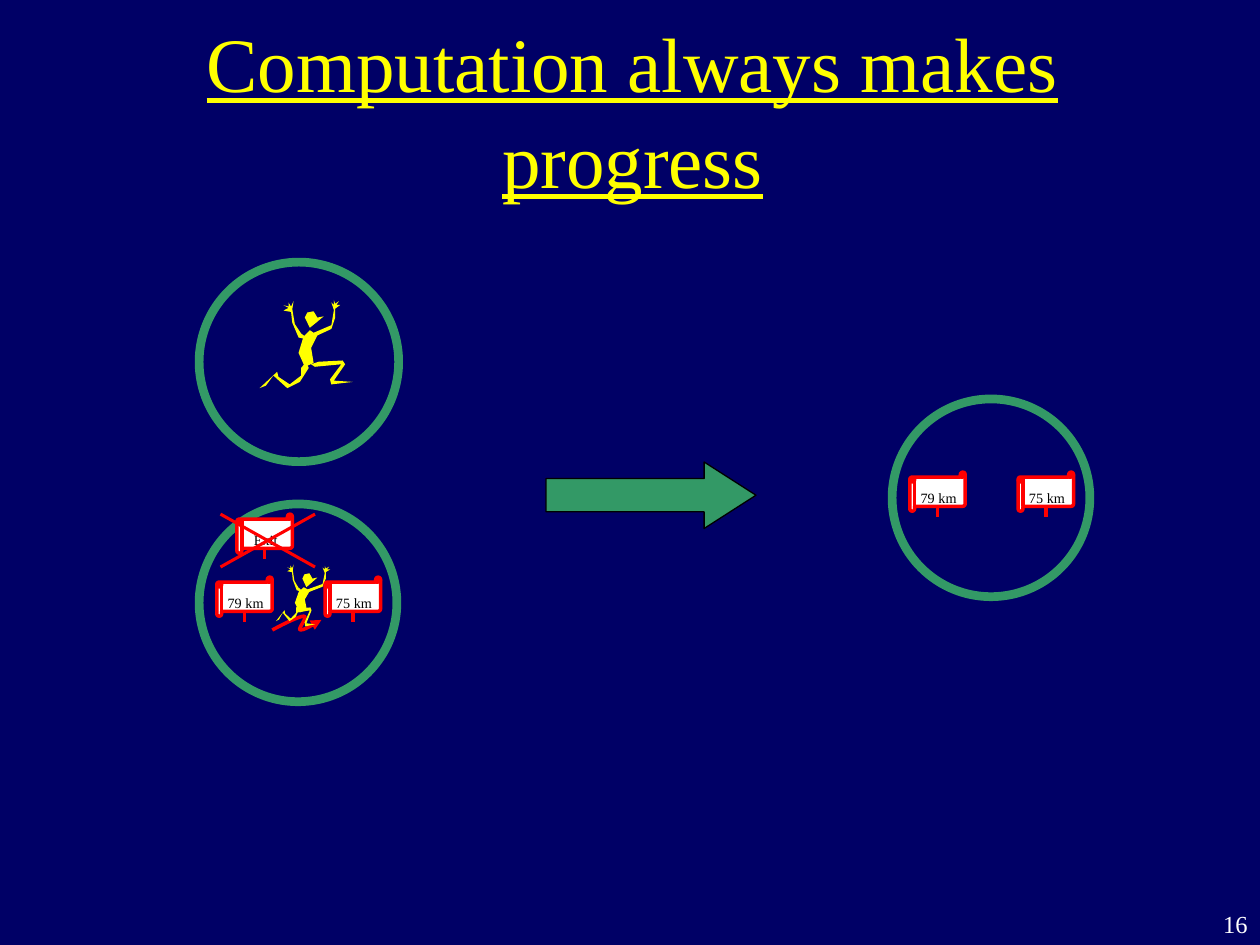
from lxml.etree import SubElement
from pptx import Presentation
from pptx.dml.color import RGBColor
from pptx.enum.shapes import MSO_CONNECTOR as Connector, MSO_SHAPE as Shape
from pptx.enum.text import MSO_ANCHOR as Anchor, PP_ALIGN as Align
from pptx.oxml.ns import qn
from pptx.util import Pt

COLORS = {
    "night": "000066", "yellow": "FFFF00", "green": "339966",
    "red": "FF0000", "white": "FFFFFF", "black": "000000",
}
FONT = "Times New Roman"
SIGN_SIZE = (31.7, 22.3)

OUTLINES = {
    "head": [(10, 5), (7, 0), (2, 1), (0, 5), (4, 13), (9, 9), (15, 4)],
    "torso": [(4, 5), (9, 0), (15, 4), (10, 14), (12, 26), (5, 29), (0, 18)],
    "front leg": [
        (0, 3), (6, 1), (25, 0), (27, 3), (18, 16), (33, 17), (16, 19),
        (15, 15), (24, 3), (3, 5)],
    "back leg": [
        (33, 5), (37, 0), (39, 5), (32, 16), (22, 21), (11, 11), (5, 19),
        (0, 21), (14, 8), (15, 12), (24, 18), (33, 11)],
    "left arm": [
        (14, 24), (21, 29), (12, 27), (7, 16), (6, 8), (0, 7), (4, 5), (0, 3),
        (4, 4), (4, 1), (6, 4), (8, 0), (7, 6), (9, 17)],
    "right arm": [
        (0, 26), (1, 29), (14, 23), (17, 14), (17, 7), (21, 4), (18, 4),
        (20, 1), (17, 3), (16, 0), (16, 4), (14, 2), (16, 8), (14, 20)],
}
LEAP = {
    "head": (26.6, 6.5, 10.8, 9.4), "torso": (23, 17.3, 10.8, 20.9),
    "front leg": (30.2, 34.6, 23.8, 13.7), "back leg": (0.7, 35.3, 28.1, 15.1),
    "left arm": (14.4, 0.7, 15.1, 22.3), "right arm": (31.7, 0, 15.1, 20.9),
}
STRIDE = {
    "head": (15.1, 5, 8.6, 7.9), "torso": (10.8, 13, 8.6, 14.4),
    "front leg": (11.5, 24.5, 10.8, 10.8), "back leg": (0, 22.3, 13.7, 10.1),
    "left arm": (6.5, 0, 9.4, 15.8), "right arm": (18, 0.7, 13, 15.1),
}
SWOOSH = [
    (0, 11), (11, 5), (22, 0), (25, 0), (29, 0), (20, 10),
    (22, 11), (25, 11), (32, 7), (39, 3)]


def rgb(name):
    return RGBColor.from_string(COLORS[name])


def paint(shape, fill=None, line=None, width=1):
    shape.shadow.inherit = False
    if fill:
        shape.fill.solid()
        shape.fill.fore_color.rgb = rgb(fill)
    else:
        shape.fill.background()
    if line:
        shape.line.color.rgb = rgb(line)
        shape.line.width = Pt(width)
    else:
        shape.line.fill.background()


def write(shape, text, size, color, align):
    shape.text_frame.text = text
    paragraph = shape.text_frame.paragraphs[0]
    paragraph.alignment = align
    run = paragraph.runs[0]
    run.font.name = FONT
    run.font.size = Pt(size)
    run.font.color.rgb = rgb(color)
    return paragraph, run


def add_outline(slide, box, points, closed=True):
    left, top, width, height = box
    x_scale = width / max(x for x, _ in points)
    y_scale = height / max(y for _, y in points)
    placed = [(Pt(left + x * x_scale), Pt(top + y * y_scale)) for x, y in points]
    builder = slide.shapes.build_freeform(*placed[0], scale=1.0)
    builder.add_line_segments(placed[1:], close=closed)
    return builder.convert_to_shape()


def add_stroke(slide, start, end, width):
    stroke = slide.shapes.add_connector(
        Connector.STRAIGHT, *(Pt(value) for value in (*start, *end)))
    stroke.line.color.rgb = rgb("red")
    stroke.line.width = Pt(width)
    SubElement(stroke._element.spPr, qn("a:effectLst"))


def add_runner(slide, left, top, pose):
    for part, (x, y, width, height) in pose.items():
        body = add_outline(slide, (left + x, top + y, width, height), OUTLINES[part])
        paint(body, "yellow")


def add_sign(slide, left, top, label):
    width, height = SIGN_SIZE
    board = slide.shapes.add_shape(
        Shape.HORIZONTAL_SCROLL, Pt(left), Pt(top), Pt(width), Pt(height))
    board.adjustments[0] = 0.125
    paint(board, "white", "red", 2)
    paragraph, run = write(board, label, 14, "black", Align.CENTER)
    paragraph.space_before = Pt(7)
    run._r.get_or_add_rPr().set("baseline", "-8000")
    board.text_frame.word_wrap = False
    board.text_frame.vertical_anchor = Anchor.MIDDLE
    post = left + width / 2
    add_stroke(slide, (post, top + 20.2), (post, top + 25.9), 2)


def add_distance_signs(slide, left, top):
    for offset, label in ((10.1, "79 km"), (72, "75 km")):
        add_sign(slide, left + offset, top + 41.8, label)


def add_ring(slide, left, top, size):
    ring = slide.shapes.add_shape(Shape.OVAL, Pt(left), Pt(top), Pt(size), Pt(size))
    paint(ring, line="green", width=5)


def add_swoosh(slide, left, top):
    swoosh = add_outline(slide, (left, top, 28.1, 7.9), SWOOSH, closed=False)
    paint(swoosh, line="red", width=2)
    SubElement(swoosh.line._get_or_add_ln(), qn("a:tailEnd"), type="triangle")
    segments = list(swoosh._element.iter(qn("a:lnTo")))
    track = segments[0].getparent()
    for first in range(0, len(segments), 3):
        curve = SubElement(track, qn("a:cubicBezTo"))
        for segment in segments[first:first + 3]:
            curve.append(segment[0])
            track.remove(segment)


def add_runner_state(slide, left, top, size):
    add_runner(slide, left + 33.8, top + 21.6, LEAP)
    add_ring(slide, left, top, size)


def add_signs_state(slide, left, top, size):
    add_distance_signs(slide, left, top)
    add_ring(slide, left, top, size)


def add_running_state(slide, left, top, size):
    add_swoosh(slide, left + 41.8, top + 64.1)
    add_runner(slide, left + 43.9, top + 34.6, STRIDE)
    add_distance_signs(slide, left, top)
    add_ring(slide, left, top, size)
    add_sign(slide, left + 21.6, top + 5.8, "Exit")
    west, east, north, south = left + 12.2, left + 66.2, top + 5.8, top + 36
    add_stroke(slide, (east, south), (west, north), 1.75)
    add_stroke(slide, (west, south), (east, north), 1.75)


def add_step_arrow(slide, left, top, width, height):
    arrow = slide.shapes.add_shape(
        Shape.RIGHT_ARROW, Pt(left), Pt(top), Pt(width), Pt(height))
    arrow.adjustments[0] = 0.5
    arrow.adjustments[1] = 0.78
    paint(arrow, "green", "black", 0.75)


def add_label(slide, box, text, size, color, align):
    label = slide.shapes.add_textbox(*(Pt(value) for value in box))
    label.text_frame.word_wrap = True
    return label, *write(label, text, size, color, align)


def add_title(slide, box):
    title, paragraph, run = add_label(
        slide, box, "Computation always makes progress", 44, "yellow", Align.CENTER)
    title.text_frame.margin_top = Pt(6.5)
    paragraph.line_spacing = 1.04
    run.font.underline = True


def main():
    deck = Presentation()
    deck.slide_width, deck.slide_height = Pt(720), Pt(540)
    slide = deck.slides.add_slide(deck.slide_layouts[6])
    slide.background.fill.solid()
    slide.background.fill.fore_color.rgb = rgb("night")
    add_label(slide, (684, 516, 36, 24), "16", 14, "white", Align.RIGHT)
    add_title(slide, (31, 0, 661, 60))
    add_step_arrow(slide, 312, 264, 120, 38)
    add_runner_state(slide, 113.8, 149.8, 114)
    add_signs_state(slide, 509.8, 228, 113)
    add_running_state(slide, 113.8, 288, 113)
    deck.save("out.pptx")


if __name__ == "__main__":
    main()
